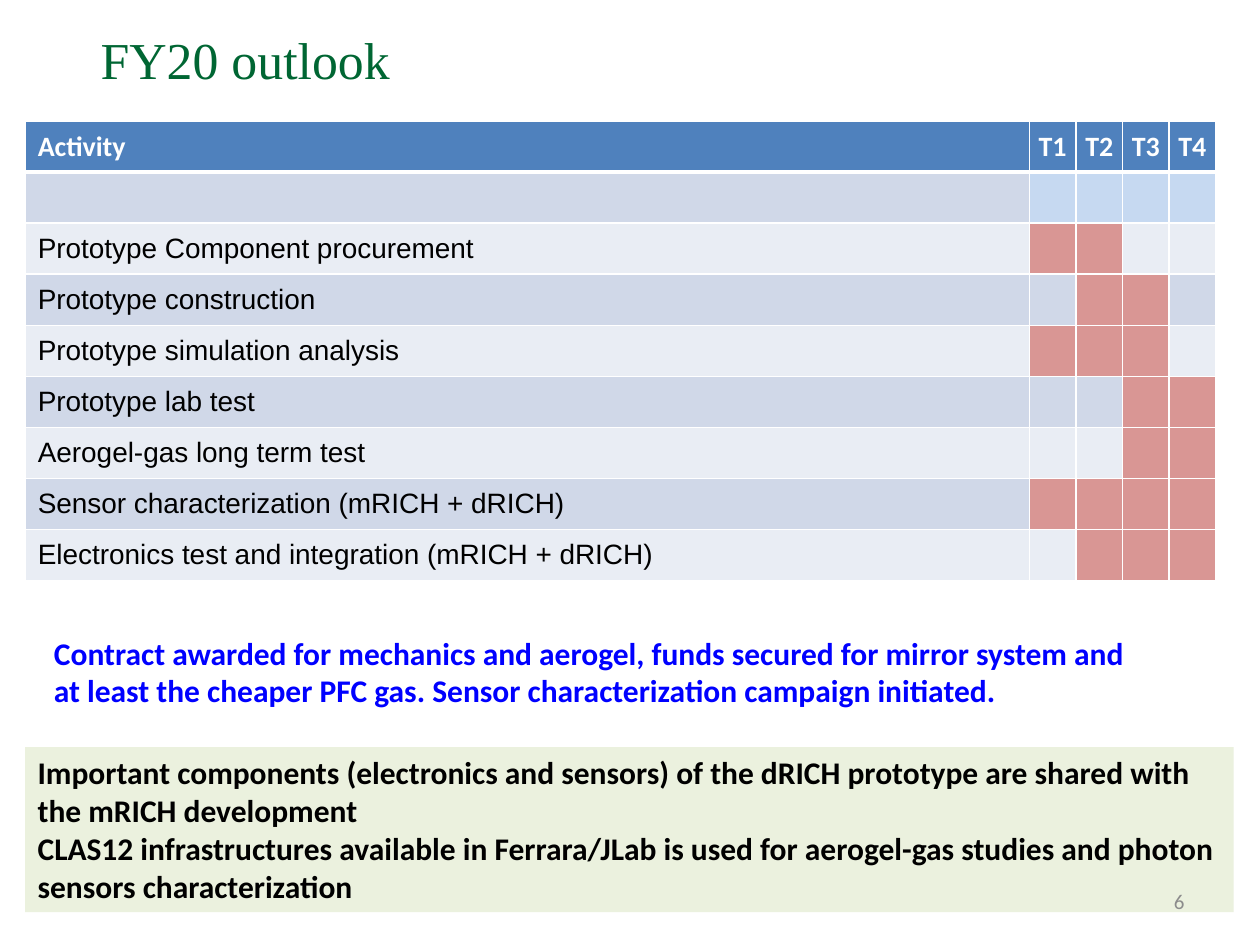
import pptx
import pptx.util
import pptx.dml.color
import pptx.enum.shapes
import pptx.enum.text
import pptx.oxml
import pptx.oxml.ns

Inches = pptx.util.Inches
Pt = pptx.util.Pt
ALIGN = pptx.enum.text.PP_ALIGN
ANCHOR = pptx.enum.text.MSO_ANCHOR


def color(value):
    return pptx.dml.color.RGBColor.from_string(value)


def write(text_frame, lines, font, size, text_color, bold=False, align=ALIGN.LEFT):
    for index, line in enumerate(lines):
        paragraph = text_frame.add_paragraph() if index else text_frame.paragraphs[0]
        paragraph.alignment = align
        run = paragraph.add_run()
        run.text = line
        run.font.name = font
        run.font.size = Pt(size)
        run.font.bold = bold
        run.font.color.rgb = color(text_color)


presentation = pptx.Presentation()
presentation.slide_width = Inches(10)
presentation.slide_height = Inches(7.5)
slide = presentation.slides.add_slide(presentation.slide_layouts[6])

quarters = ["T1", "T2", "T3", "T4"]
activities = [
    ("", []),
    ("Prototype Component procurement", ["T1", "T2"]),
    ("Prototype construction", ["T2", "T3"]),
    ("Prototype simulation analysis", ["T1", "T2", "T3"]),
    ("Prototype lab test", ["T3", "T4"]),
    ("Aerogel-gas long term test", ["T3", "T4"]),
    ("Sensor characterization (mRICH + dRICH)", quarters),
    ("Electronics test and integration (mRICH + dRICH)", ["T2", "T3", "T4"]),
]

table = slide.shapes.add_table(
    len(activities) + 1, len(quarters) + 1,
    Inches(0.2), Inches(0.96), Inches(9.45), Inches(3.65)).table
for index, column in enumerate(table.columns):
    column.width = Inches(0.37 if index else 7.97)

for row in range(len(activities) + 1):
    for column in range(len(quarters) + 1):
        cell = table.cell(row, column)
        cell.vertical_anchor = ANCHOR.MIDDLE
        cell_properties = cell._tc.get_or_add_tcPr()
        for side in ("L", "R", "T", "B"):
            heavy = (row, side) in ((0, "B"), (1, "T"))
            cell_properties.append(pptx.oxml.parse_xml(
                f'<a:ln{side} {pptx.oxml.ns.nsdecls("a")} w="{Pt(3 if heavy else 1)}">'
                f'<a:solidFill><a:srgbClr val="FFFFFF"/></a:solidFill></a:ln{side}>'))

        if row == 0:
            fill = "4F81BD"
            if column:
                cell.margin_left = cell.margin_right = Inches(0.04)
                cell.margin_top = cell.margin_bottom = Inches(0.04)
            write(cell.text_frame, [["Activity", *quarters][column]], "Calibri", 16,
                  "FFFFFF", True, ALIGN.CENTER if column else ALIGN.LEFT)
        else:
            activity, active_quarters = activities[row - 1]
            fill = "D0D8E8" if row % 2 else "E9EDF4"
            if column and quarters[column - 1] in active_quarters:
                fill = "D99694"
            elif column and row == 1:
                fill = "C6D9F1"
            if column == 0 and activity:
                write(cell.text_frame, [activity], "Arial", 16, "000000")
        cell.fill.solid()
        cell.fill.fore_color.rgb = color(fill)

note = slide.shapes.add_shape(
    pptx.enum.shapes.MSO_SHAPE.RECTANGLE,
    Inches(0.2), Inches(5.93), Inches(9.59), Inches(1.31))
note.shadow.inherit = False
note.fill.solid()
note.fill.fore_color.rgb = color("EBF1DE")
note.line.fill.background()
note.text_frame.word_wrap = True
note.text_frame.vertical_anchor = ANCHOR.TOP
write(note.text_frame, [
    "Important components (electronics and sensors) of the dRICH prototype are shared with the mRICH development",
    "CLAS12 infrastructures available in Ferrara/JLab is used for aerogel-gas studies and photon sensors characterization",
], "Calibri", 18, "000000", True)

number = slide.shapes.add_textbox(Inches(7.17), Inches(6.95), Inches(2.33), Inches(0.4))
number.text_frame.word_wrap = True
number.text_frame.vertical_anchor = ANCHOR.MIDDLE
write(number.text_frame, ["6"], "Calibri", 12, "8C8C8C", align=ALIGN.RIGHT)

title = slide.shapes.add_textbox(Inches(0.7), Inches(0.09), Inches(7.87), Inches(0.75))
title.text_frame.word_wrap = True
title.text_frame.vertical_anchor = ANCHOR.MIDDLE
write(title.text_frame, ["FY20 outlook"], "Times New Roman", 29.6, "006633")

status = slide.shapes.add_textbox(Inches(0.33), Inches(4.98), Inches(8.83), Inches(0.71))
status.text_frame.word_wrap = False
write(status.text_frame, [
    "Contract awarded for mechanics and aerogel, funds secured for mirror system and",
    "at least the cheaper PFC gas. Sensor characterization campaign initiated.",
], "Calibri", 18, "0000FF", True)

presentation.save("out.pptx")
